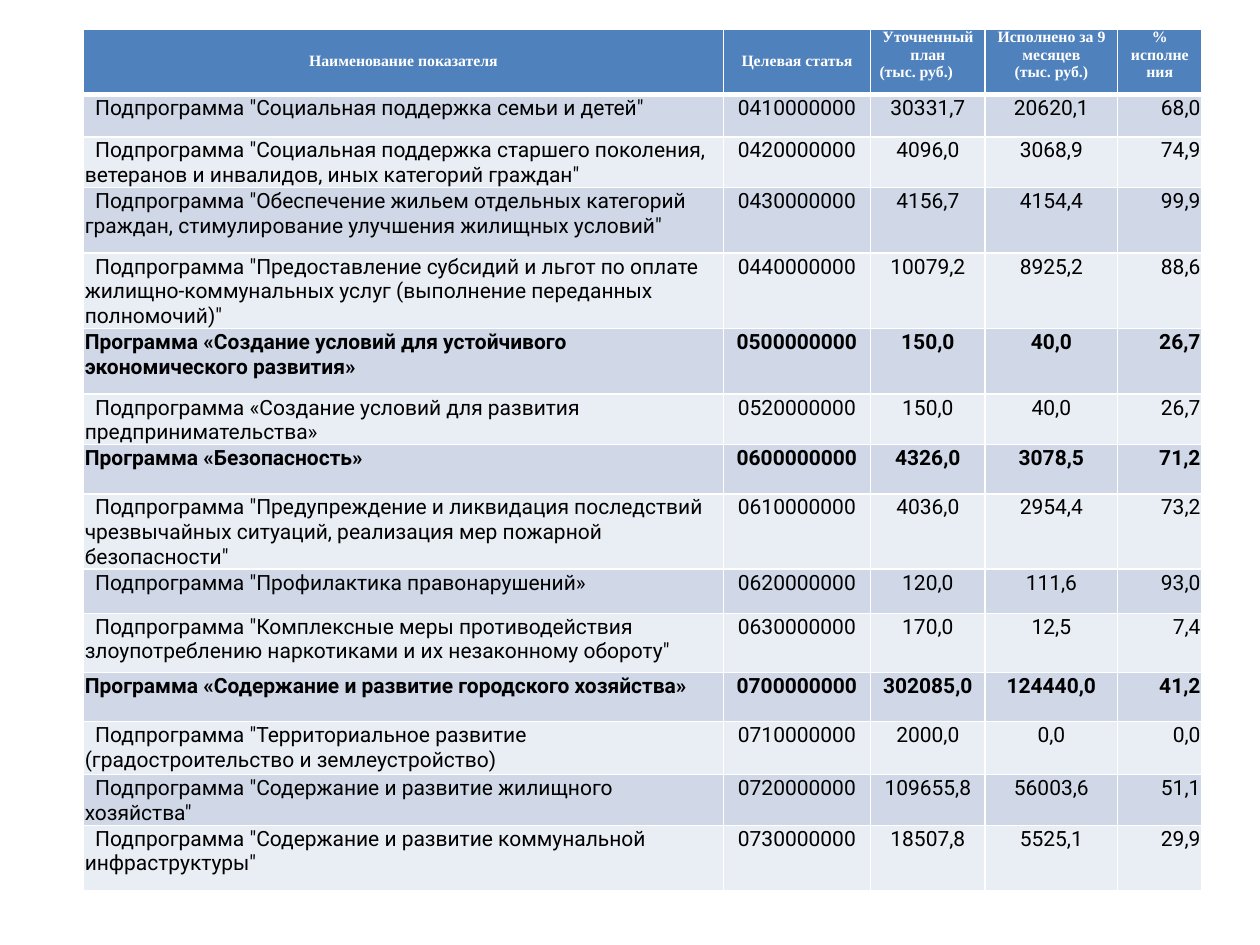
"""Build a slide with a table of budget programme execution over nine months."""
from lxml.etree import SubElement
from pptx import Presentation
from pptx.dml.color import RGBColor as RGB
from pptx.enum.text import MSO_ANCHOR as ANCHOR, PP_ALIGN as ALIGN
from pptx.oxml.ns import qn
from pptx.util import Cm, Pt

HEADERS = [
    ["Наименование показателя"],
    ["Целевая статья"],
    ["Уточненный план", "(тыс. руб.)"],
    ["Исполнено за 9 месяцев", "(тыс. руб.)"],
    ["% исполнения"],
]
ROWS = [
    ('Подпрограмма "Социальная поддержка семьи и детей"',
     "0410000000", "30331,7", "20620,1", "68,0"),
    ('Подпрограмма "Социальная поддержка старшего поколения, ветеранов и инвалидов, иных категорий граждан"',
     "0420000000", "4096,0", "3068,9", "74,9"),
    ('Подпрограмма "Обеспечение жильем отдельных категорий граждан, стимулирование улучшения жилищных условий"',
     "0430000000", "4156,7", "4154,4", "99,9"),
    ('Подпрограмма "Предоставление субсидий и льгот по оплате жилищно-коммунальных услуг '
     '(выполнение переданных полномочий)"',
     "0440000000", "10079,2", "8925,2", "88,6"),
    ("Программа «Создание условий для устойчивого экономического развития»",
     "0500000000", "150,0", "40,0", "26,7"),
    ("Подпрограмма «Создание условий для развития предпринимательства»",
     "0520000000", "150,0", "40,0", "26,7"),
    ("Программа «Безопасность»",
     "0600000000", "4326,0", "3078,5", "71,2"),
    ('Подпрограмма "Предупреждение и ликвидация последствий чрезвычайных ситуаций, '
     'реализация мер пожарной безопасности"',
     "0610000000", "4036,0", "2954,4", "73,2"),
    ('Подпрограмма "Профилактика правонарушений»',
     "0620000000", "120,0", "111,6", "93,0"),
    ('Подпрограмма "Комплексные меры противодействия злоупотреблению наркотиками и их незаконному обороту"',
     "0630000000", "170,0", "12,5", "7,4"),
    ("Программа «Содержание и развитие городского хозяйства»",
     "0700000000", "302085,0", "124440,0", "41,2"),
    ('Подпрограмма "Территориальное развитие (градостроительство и землеустройство)',
     "0710000000", "2000,0", "0,0", "0,0"),
    ('Подпрограмма "Содержание и развитие жилищного хозяйства"',
     "0720000000", "109655,8", "56003,6", "51,1"),
    ('Подпрограмма "Содержание и развитие коммунальной инфраструктуры"',
     "0730000000", "18507,8", "5525,1", "29,9"),
]
COL_WIDTHS = [12.9, 2.97, 2.31, 2.67, 1.7]
ROW_HEIGHTS = [1.32, 0.86, 0.99, 1.32, 1.32, 1.32, 0.99, 0.99,
               0.99, 0.89, 1.19, 0.99, 1.07, 0.84, 1.32]
ALIGNS = [ALIGN.LEFT] + [ALIGN.CENTER] * 3 + [ALIGN.RIGHT]
BANDS = ["D0D8E8", "E9EDF4"]


def color(value):
    return RGB.from_string(value)


def style_cell(cell, fill, margins, top=1, bottom=1):
    tcPr = cell._tc.get_or_add_tcPr()
    for side, width in zip("LRTB", (1, 1, top, bottom)):
        ln = SubElement(tcPr, qn(f"a:ln{side}"), w=str(Pt(width)))
        SubElement(SubElement(ln, qn("a:solidFill")), qn("a:srgbClr"), val="FFFFFF")
    cell.fill.solid()
    cell.fill.fore_color.rgb = color(fill)
    left, t, right, b = (Cm(m) for m in margins)
    cell.margin_left, cell.margin_top = left, t
    cell.margin_right, cell.margin_bottom = right, b


def add_run(p, text, align, font, size, hex_color, bold):
    p.alignment = align
    r = p.add_run()
    r.text = text
    r.font.name, r.font.size, r.font.bold = font, Pt(size), bold
    r.font.color.rgb = color(hex_color)


def fill_header(table):
    for col, lines in enumerate(HEADERS):
        cell = table.cell(0, col)
        style_cell(cell, "4F81BD", (0.18, 0, 0.18, 0), bottom=3)
        cell.vertical_anchor = ANCHOR.MIDDLE if col < 2 else ANCHOR.TOP
        tf = cell.text_frame
        for i, line in enumerate(lines):
            p = tf.add_paragraph() if i else tf.paragraphs[0]
            align = ALIGN.LEFT if col == 2 and i else ALIGN.CENTER
            add_run(p, line, align, "Times New Roman", 9, "FFFFFF", True)


def fill_body(table):
    for row, values in enumerate(ROWS, 1):
        is_program = values[0].startswith("Программа")
        for col, (text, align) in enumerate(zip(values, ALIGNS)):
            cell = table.cell(row, col)
            style_cell(cell, BANDS[(row - 1) % 2], (0.03, 0.03, 0.03, 0), top=3 if row == 1 else 1)
            p = cell.text_frame.paragraphs[0]
            add_run(p, text, align, "Roboto", 12, "000000", is_program)
            if col == 0 and not is_program:
                p._p.get_or_add_pPr().set("indent", str(Cm(0.21)))


def main():
    prs = Presentation()
    prs.slide_width, prs.slide_height = Cm(25.4), Cm(19.05)
    s = prs.slides.add_slide(prs.slide_layouts[6])
    table = s.shapes.add_table(len(ROW_HEIGHTS), len(COL_WIDTHS), Cm(1.68), Cm(0.58),
                               Cm(sum(COL_WIDTHS)), Cm(sum(ROW_HEIGHTS))).table
    for column, width in zip(table.columns, COL_WIDTHS):
        column.width = Cm(width)
    for row, height in zip(table.rows, ROW_HEIGHTS):
        row.height = Cm(height)
    fill_header(table)
    fill_body(table)
    prs.save("out.pptx")


if __name__ == "__main__":
    main()
